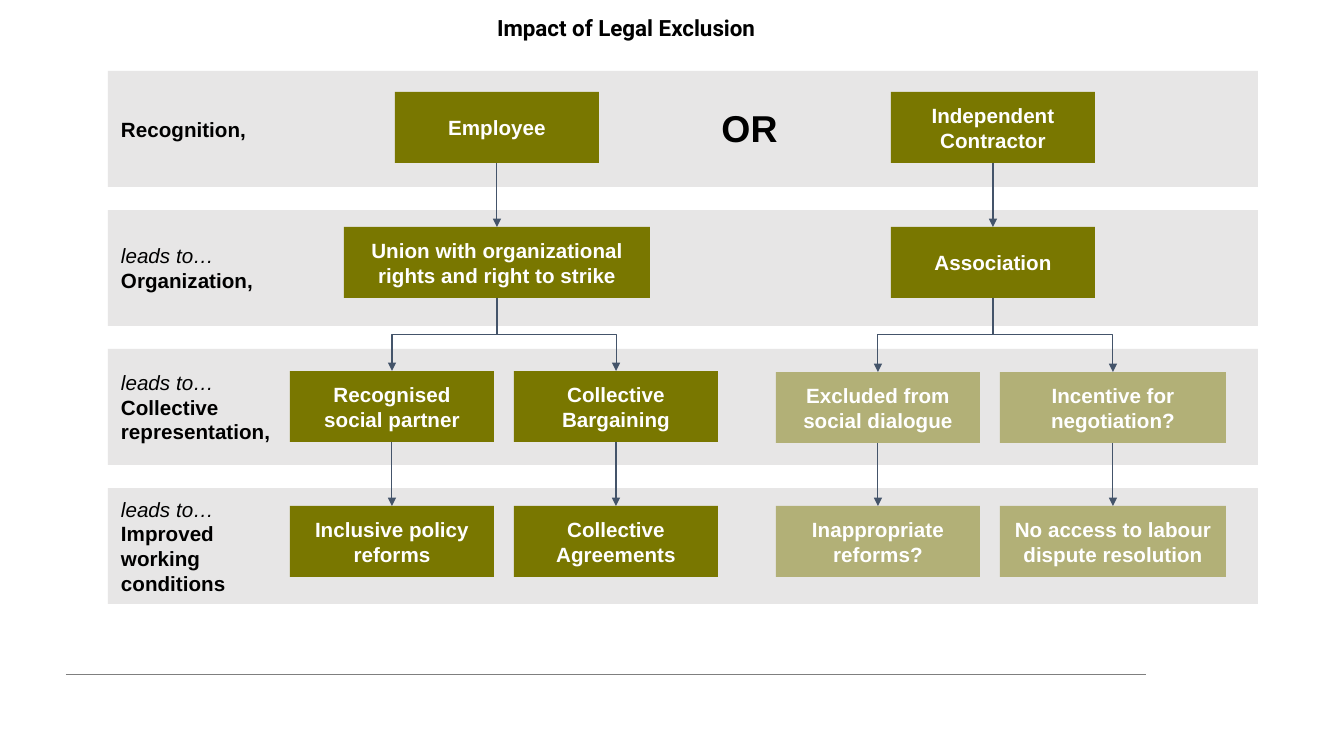
import pptx
import pptx.util
import pptx.dml.color
import pptx.enum.shapes
import pptx.enum.text
import pptx.oxml
import pptx.oxml.ns

TITLE = "Impact of Legal Exclusion"

# Each stage: lead-in, then the lines of its name
STAGES = [
    ("", ["Recognition,"]),
    ("leads to…", ["Organization,"]),
    ("leads to…", ["Collective", "representation,"]),
    ("leads to…", ["Improved", "working", "conditions"]),
]

# key: (lines, centre x, top, width, faded)
BOXES = {
    "employee": (["Employee"], 497, 92, 204, False),
    "contractor": (["Independent Contractor"], 993, 92, 204, False),
    "union": (["Union with organizational rights and right to strike"], 497, 227, 306, False),
    "association": (["Association"], 993, 227, 204, False),
    "partner": (["Recognised social partner"], 392, 371, 204, False),
    "bargaining": (["Collective Bargaining"], 616, 371, 204, False),
    "excluded": (["Excluded from social dialogue"], 878, 372, 204, True),
    "incentive": (["Incentive for negotiation?"], 1113, 372, 226, True),
    "inclusive": (["Inclusive policy", "reforms"], 392, 506, 204, False),
    "agreements": (["Collective Agreements"], 616, 506, 204, False),
    "inappropriate": (["Inappropriate", "reforms?"], 878, 506, 204, True),
    "no_access": (["No access to labour dispute resolution"], 1113, 506, 226, True),
}

ARROWS = [
    ("employee", "union"), ("contractor", "association"),
    ("union", "partner"), ("union", "bargaining"),
    ("association", "excluded"), ("association", "incentive"),
    ("partner", "inclusive"), ("bargaining", "agreements"),
    ("excluded", "inappropriate"), ("incentive", "no_access"),
]

BOX_HEIGHT = 71
BAND_LEFT, BAND_TOP, BAND_WIDTH, BAND_HEIGHT, BAND_PITCH = 108, 71, 1150, 116, 139
INSET = 13
FADED_ALPHA = 48000

BLACK = pptx.dml.color.RGBColor(0x00, 0x00, 0x00)
WHITE = pptx.dml.color.RGBColor(0xFF, 0xFF, 0xFF)
OLIVE = pptx.dml.color.RGBColor(0x79, 0x77, 0x00)
BAND_GREY = pptx.dml.color.RGBColor(0xE7, 0xE6, 0xE6)
RULE_GREY = pptx.dml.color.RGBColor(0x7F, 0x7F, 0x7F)
ARROW_BLUE = pptx.dml.color.RGBColor(0x44, 0x54, 0x6A)

LEFT = pptx.enum.text.PP_ALIGN.LEFT
CENTER = pptx.enum.text.PP_ALIGN.CENTER
MIDDLE = pptx.enum.text.MSO_ANCHOR.MIDDLE
STRAIGHT = pptx.enum.shapes.MSO_CONNECTOR.STRAIGHT
ELBOW = pptx.enum.shapes.MSO_CONNECTOR.ELBOW


def px(n):
    return pptx.util.Emu(round(n * 914400 / 100.8))


def add_child(parent, tag, **attributes):
    child = pptx.oxml.parse_xml(f"<{tag} {pptx.oxml.ns.nsdecls('a')}/>")
    for name, value in attributes.items():
        child.set(name, str(value))
    parent.append(child)
    return child


def write(s, lines, color, align, size=14.7, font="Arial", lead=""):
    """Fill a shape with bold lines, after an optional italic lead-in."""
    tf = s.text_frame
    tf.word_wrap = True
    tf.vertical_anchor = MIDDLE
    tf.margin_left = tf.margin_right = tf.margin_top = tf.margin_bottom = px(INSET)
    all_lines = [lead] + lines if lead else lines
    for i, line in enumerate(all_lines):
        p = tf.paragraphs[0] if i == 0 else tf.add_paragraph()
        p.text = line
        p.alignment = align
        is_lead = bool(lead) and i == 0
        p.font.size = pptx.util.Pt(size)
        p.font.name = font
        p.font.color.rgb = color
        p.font.bold = not is_lead
        p.font.italic = is_lead
    return tf


def add_rect(shapes, x, y, w, h, color):
    s = shapes.add_shape(pptx.enum.shapes.MSO_SHAPE.RECTANGLE, px(x), px(y), px(w), px(h))
    s.shadow.inherit = False
    s.fill.solid()
    s.fill.fore_color.rgb = color
    s.line.fill.background()
    return s


def add_line(shapes, kind, x1, y1, x2, y2, color):
    c = shapes.add_connector(kind, px(x1), px(y1), px(x2), px(y2))
    c.line.color.rgb = color
    c.line.width = pptx.util.Pt(0.75)
    add_child(c._element.spPr, "a:effectLst")
    return c


def add_arrow(shapes, x1, y1, x2, y2):
    """Point down from one box to another, bending halfway if they are not aligned."""
    if x1 == x2:
        c = add_line(shapes, STRAIGHT, x1, y1, x2, y2, ARROW_BLUE)
    else:
        # The preset elbow starts sideways, so it is turned a quarter about its centre
        mid_x, mid_y = (x1 + x2) / 2, (y1 + y2) / 2
        half_w, half_h = (y2 - y1) / 2, abs(x2 - x1) / 2
        c = add_line(shapes, ELBOW, mid_x - half_w, mid_y - half_h,
                     mid_x + half_w, mid_y + half_h, ARROW_BLUE)
        xfrm = c._element.spPr.xfrm
        xfrm.set("rot", "5400000" if x2 < x1 else "16200000")
        if x2 > x1:
            xfrm.set("flipH", "1")
    add_child(c.line._get_or_add_ln(), "a:tailEnd", type="triangle")


def main():
    prs = pptx.Presentation()
    prs.slide_width, prs.slide_height = px(1344), px(756)
    shapes = prs.slides.add_slide(prs.slide_layouts[6]).shapes

    add_line(shapes, STRAIGHT, 66, 675, 1146, 675, RULE_GREY)

    for i, (lead, lines) in enumerate(STAGES):
        band = add_rect(shapes, BAND_LEFT, BAND_TOP + i * BAND_PITCH,
                        BAND_WIDTH, BAND_HEIGHT, BAND_GREY)
        write(band, lines, BLACK, LEFT, lead=lead)

    for lines, center, top, width, faded in BOXES.values():
        box = add_rect(shapes, center - width / 2, top, width, BOX_HEIGHT, OLIVE)
        if faded:
            color = box._element.spPr.find(".//" + pptx.oxml.ns.qn("a:srgbClr"))
            add_child(color, "a:alpha", val=FADED_ALPHA)
        write(box, lines, WHITE, CENTER)

    for start, end in ARROWS:
        _, x1, top, _, _ = BOXES[start]
        _, x2, y2, _, _ = BOXES[end]
        add_arrow(shapes, x1, top + BOX_HEIGHT, x2, y2)

    choice = shapes.add_textbox(px(690), px(102), px(119), px(52))
    write(choice, ["OR"], BLACK, CENTER, size=26.7)

    title = shapes.add_textbox(px(487), px(9), px(857), px(37))
    tf = write(title, [TITLE], BLACK, LEFT, size=16, font="Roboto")
    tf.margin_left = tf.margin_right = px(10)
    tf.margin_top = tf.margin_bottom = px(5)

    prs.save("out.pptx")


if __name__ == "__main__":
    main()
